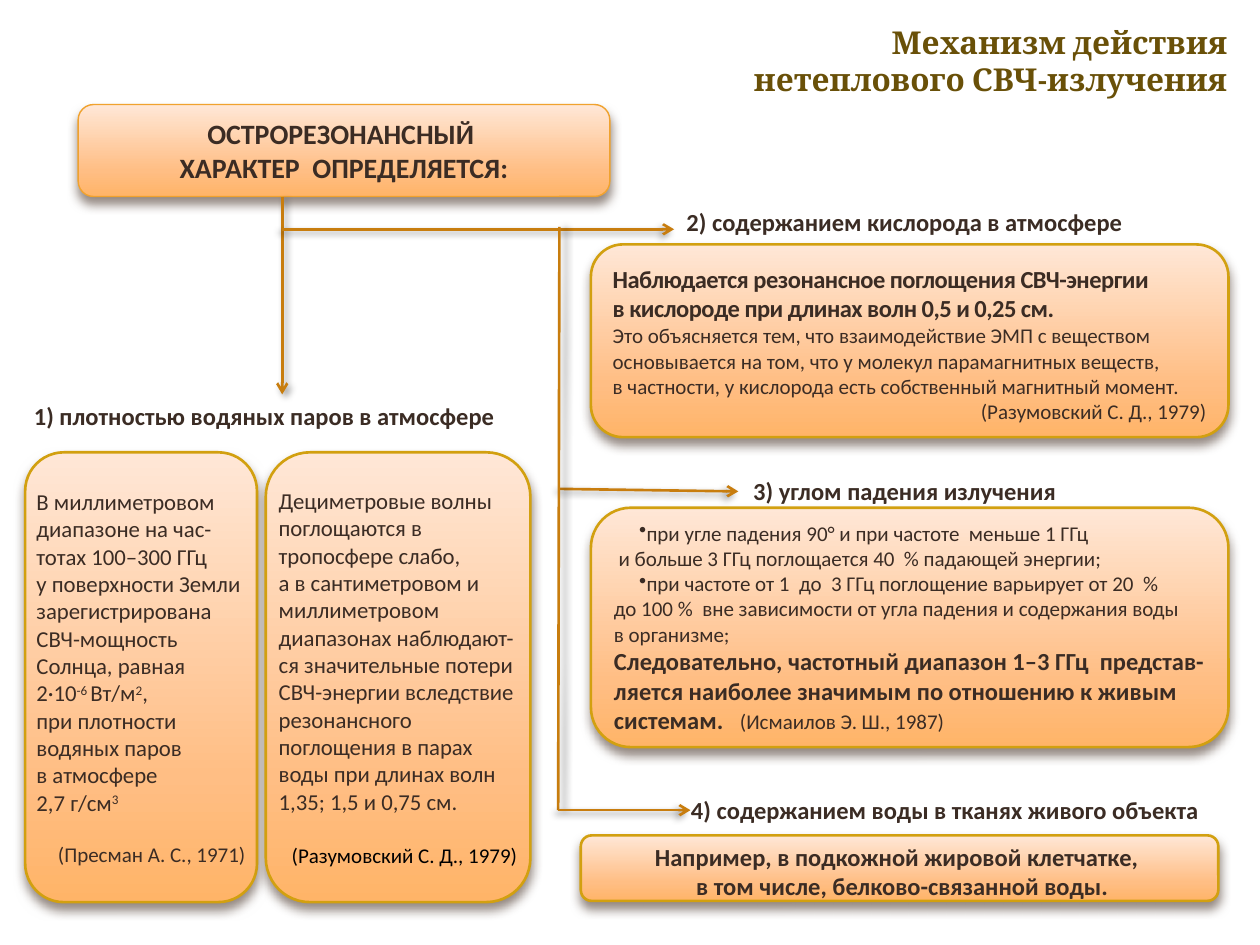
import copy
from dataclasses import dataclass

import pptx
import pptx.dml.color
import pptx.enum.shapes
import pptx.enum.text
import pptx.oxml
import pptx.oxml.ns
import pptx.util
from pptx.util import Inches

ALIGN = pptx.enum.text.PP_ALIGN
ANCHOR = pptx.enum.text.MSO_ANCHOR
NAMESPACE = pptx.oxml.ns.nsdecls("a")
ZERO_INSETS = (0, 0, 0, 0)
PANEL_INSETS = (0.1, 0.05, 0.1, 0)


@dataclass(frozen=True)
class Theme:
    heading_font: str = "Cambria"
    body_font: str = "Calibri"
    heading: str = "695008"
    ink: str = "3B2C24"
    black: str = "000000"
    header_border: str = "F0A22E"
    panel_border: str = "D2A010"
    arrow: str = "C87D0E"
    gradient: tuple = ((0, "FFE7D7"), (0.72, "FFBE84"), (1, "FFB468"))
    panel_shadow: tuple = ("4E3B30", 60, 6, 4)
    arrow_shadow: tuple = ("000000", 40, 4, 3)
    title_size: int = 18
    header_size: int = 16
    strong_size: int = 14
    column_size: int = 13
    small_size: int = 12


THEME = Theme()


@dataclass(frozen=True)
class Box:
    left: float
    top: float
    width: float
    height: float

    def inside(self, x, y, width, height):
        return Box(self.left + x, self.top + y, width, height)

    def lengths(self):
        return [Inches(n) for n in (self.left, self.top, self.width, self.height)]


def color(value):
    return pptx.dml.color.RGBColor.from_string(value)


def add_shadow(shape, shadow, angle):
    """Put an outer shadow (colour, opacity %, blur pt, distance pt) on a shape."""
    tint, opacity, blur, distance = shadow
    properties = shape._element.spPr
    effects = properties.find(pptx.oxml.ns.qn("a:effectLst"))
    if effects is None:
        effects = pptx.oxml.parse_xml(f"<a:effectLst {NAMESPACE}/>")
        properties.append(effects)
    effects.append(pptx.oxml.parse_xml(
        f'<a:outerShdw {NAMESPACE} blurRad="{blur * 12700}" dist="{distance * 12700}" '
        f'dir="{angle * 60000}" rotWithShape="0"><a:srgbClr val="{tint}">'
        f'<a:alpha val="{opacity * 1000}"/></a:srgbClr></a:outerShdw>'))


def add_run(paragraph, text, size, bold=False, tint=THEME.ink, font=THEME.body_font,
            raised=False, spacing=0):
    """Add text in one style; a newline becomes a line break."""
    for index, line in enumerate(text.split("\n")):
        if index:
            paragraph.add_line_break()
        if not line:
            continue
        run = paragraph.add_run()
        run.text = line
        run.font.size = pptx.util.Pt(size)
        run.font.bold = bold
        run.font.name = font
        run.font.color.rgb = color(tint)
        if raised:
            run._r.get_or_add_rPr().set("baseline", "30000")
        if spacing:
            run._r.get_or_add_rPr().set("spc", str(spacing))


def next_paragraph(frame, align=ALIGN.LEFT, before=0):
    first = frame.paragraphs[0]
    paragraph = frame.add_paragraph() if first.runs else first
    paragraph.alignment = align
    paragraph.space_before = pptx.util.Pt(before)
    return paragraph


def set_indent(paragraph, first_line, tab, tab_align, bullet=None):
    properties = paragraph._p.get_or_add_pPr()
    properties.set("marL", str(Inches(0.09)))
    properties.set("indent", str(Inches(first_line)))
    if bullet:
        properties.append(pptx.oxml.parse_xml(f'<a:buChar {NAMESPACE} char="{bullet}"/>'))
    properties.append(pptx.oxml.parse_xml(
        f'<a:tabLst {NAMESPACE}><a:tab pos="{Inches(tab)}" algn="{tab_align}"/></a:tabLst>'))


def set_insets(frame, insets):
    frame.margin_left, frame.margin_top, frame.margin_right, frame.margin_bottom = map(Inches, insets)


def add_panel(slide, box, insets=ZERO_INSETS, border=THEME.panel_border, weight=1.5):
    """Draw a rounded gradient panel and return its text frame."""
    shape = slide.shapes.add_shape(
        pptx.enum.shapes.MSO_SHAPE.ROUNDED_RECTANGLE, *box.lengths())
    shape.fill.gradient()
    shape.fill.gradient_angle = 270
    stop_list = shape._element.spPr.find(".//" + pptx.oxml.ns.qn("a:gsLst"))
    stop_list.append(copy.deepcopy(stop_list[-1]))
    for stop, (position, tint) in zip(shape.fill.gradient_stops, THEME.gradient):
        stop.position = position
        stop.color.rgb = color(tint)
    shape.line.color.rgb = color(border)
    shape.line.width = pptx.util.Pt(weight)
    shape.shadow.inherit = False
    add_shadow(shape, THEME.panel_shadow, 90)
    frame = shape.text_frame
    frame.word_wrap = True
    frame.vertical_anchor = ANCHOR.MIDDLE
    set_insets(frame, insets)
    return frame


def add_label(slide, box, wrap=False):
    frame = slide.shapes.add_textbox(*box.lengths()).text_frame
    frame.word_wrap = wrap
    frame.auto_size = pptx.enum.text.MSO_AUTO_SIZE.SHAPE_TO_FIT_TEXT
    return frame


def add_caption(slide, box, text):
    frame = add_label(slide, box)
    add_run(next_paragraph(frame), text, THEME.strong_size, bold=True)
    return frame


def add_title(slide, box):
    paragraph = next_paragraph(add_label(slide, box, wrap=True), ALIGN.RIGHT)
    add_run(paragraph, "Механизм действия\nнетеплового СВЧ-излучения", THEME.title_size,
            bold=True, tint=THEME.heading, font=THEME.heading_font)


def add_header(slide, box):
    frame = add_panel(slide, box, (0.1, 0.05, 0.1, 0.05), THEME.header_border, 0.79)
    add_run(next_paragraph(frame, ALIGN.CENTER), "ОСТРОРЕЗОНАНСНЫЙ \nХАРАКТЕР  ОПРЕДЕЛЯЕТСЯ:",
            THEME.header_size, bold=True)


def add_arrows(slide, box):
    """Draw the branching lines; the box spans them from the header to the last arrow."""
    trunk, bottom = 2.2, box.height
    branches = (
        ((0, 0), (0, 1.57), 45, True),
        ((0, 0.26), (box.width - 0.51, 0.26), 135, True),
        ((trunk, 2.32), (box.width, 2.34), 135, True),
        ((trunk, 0.24), (trunk - 0.01, bottom), 0, False),
        ((trunk - 0.01, bottom), (3.24, bottom), 135, True),
    )
    for start, end, shadow_angle, has_head in branches:
        points = [Inches(origin + offset) for point in (start, end)
                  for origin, offset in zip((box.left, box.top), point)]
        connector = slide.shapes.add_connector(
            pptx.enum.shapes.MSO_CONNECTOR.STRAIGHT, *points)
        connector.line.color.rgb = color(THEME.arrow)
        connector.line.width = pptx.util.Pt(1.5)
        if has_head:
            connector.line._get_or_add_ln().append(
                pptx.oxml.parse_xml(f'<a:tailEnd {NAMESPACE} type="arrow"/>'))
        add_shadow(connector, THEME.arrow_shadow, shadow_angle)


def add_vapour(slide, box):
    add_caption(slide, box.inside(-0.03, 0, 3.88, 0.34), "1) плотностью водяных паров в атмосфере")
    size = THEME.column_size
    frame = add_panel(slide, box.inside(0, 0.46, 1.84, box.height - 0.46))
    paragraph = next_paragraph(frame)
    pieces = (
        "В миллиметровом диапазоне на час-тотах 100–300 ГГц \nу поверхности Земли "
        "зарегистрирована СВЧ-мощность \nСолнца, равная\n2·10", "-6 ", "Вт/м", "2",
        ", \nпри плотности водяных паров\nв атмосфере\n2,7 г/см", "3")
    for index, piece in enumerate(pieces):
        add_run(paragraph, piece, size, raised=index % 2 == 1)
    add_run(next_paragraph(frame, ALIGN.RIGHT, 14.6), "(Пресман А. С., 1971)", THEME.small_size)

    frame = add_panel(slide, box.inside(1.91, 0.46, 2.1, box.height - 0.46))
    add_run(next_paragraph(frame),
            "Дециметровые волны поглощаются в тропосфере слабо,\nа в сантиметровом и "
            "миллиметровом диапазонах наблюдают-ся значительные потери СВЧ-энергии "
            "вследствие резонансного поглощения в парах воды при длинах волн", size)
    add_run(next_paragraph(frame), "1,35; 1,5 и 0,75 см.", size)
    add_run(next_paragraph(frame, ALIGN.RIGHT, 15.9), "(Разумовский С. Д., 1979)",
            THEME.small_size, tint=THEME.black)


def add_oxygen(slide, box):
    add_caption(slide, box.inside(0.66, 0, 3.74, 0.34), "2) содержанием кислорода в атмосфере")
    frame = add_panel(slide, box.inside(0, 0.35, box.width, box.height - 0.35), PANEL_INSETS)
    paragraph = next_paragraph(frame)
    add_run(paragraph, "Наблюдается резонансное поглощения СВЧ-энергии\n"
            "в кислороде при длинах волн 0,5 и 0,25 см.\n",
            THEME.strong_size, bold=True, spacing=-30)
    add_run(paragraph, "Это объясняется тем, что взаимодействие ЭМП с веществом основывается на том, "
            "что у молекул парамагнитных веществ, \nв частности, у кислорода есть собственный "
            "магнитный момент.", THEME.small_size)
    add_run(next_paragraph(frame, ALIGN.RIGHT), "(Разумовский С. Д., 1979)", THEME.small_size)


def add_angle(slide, box):
    add_caption(slide, box.inside(1.19, 0, 2.67, 0.34), "3) углом падения излучения")
    frame = add_panel(slide, box.inside(0, 0.3, box.width, box.height - 0.3))
    for text in (
            "при угле падения 90° и при частоте  меньше 1 ГГц\n"
            " и больше 3 ГГц поглощается 40  % падающей энергии;",
            "при частоте от 1  до  3 ГГц поглощение варьирует от 20  % \nдо 100 %  вне "
            "зависимости от угла падения и содержания воды \nв организме;"):
        paragraph = next_paragraph(frame)
        set_indent(paragraph, 0.2, 0.49, "l", bullet="•")
        add_run(paragraph, text, THEME.small_size)
    paragraph = next_paragraph(frame)
    set_indent(paragraph, 0, 4.75, "r")
    add_run(paragraph, "Следовательно, частотный диапазон 1–3 ГГц  представ-ляется наиболее "
            "значимым по отношению к живым системам.\t", THEME.strong_size, bold=True)
    add_run(paragraph, "(Исмаилов Э. Ш., 1987)", THEME.small_size)


def add_tissue(slide, box):
    caption = add_caption(slide, box.inside(0.83, 0, 4.19, 0.24),
                          " 4) содержанием воды в тканях живого объекта")
    caption.word_wrap = True
    caption.vertical_anchor = ANCHOR.MIDDLE
    set_insets(caption, ZERO_INSETS)
    frame = add_panel(slide, box.inside(0, 0.32, box.width, box.height - 0.32), PANEL_INSETS)
    add_run(next_paragraph(frame, ALIGN.CENTER), "Например, в подкожной жировой клетчатке, \n"
            " в том числе, белково-связанной воды.", THEME.strong_size, bold=True)


def main():
    presentation = pptx.Presentation()
    presentation.slide_width, presentation.slide_height = Inches(10), Inches(7.5)
    slide = presentation.slides.add_slide(presentation.slide_layouts[6])
    add_title(slide, Box(4.84, 0.13, 5, 0.71))
    add_header(slide, Box(0.62, 0.83, 4.22, 0.73))
    add_arrows(slide, Box(2.24, 1.56, 3.62, 4.87))
    add_vapour(slide, Box(0.2, 3.13, 4.01, 4.03))
    add_oxygen(slide, Box(4.69, 1.59, 5.06, 1.88))
    add_angle(slide, Box(4.69, 3.73, 5.06, 2.2))
    add_tissue(slide, Box(4.61, 6.31, 5.06, 0.84))
    presentation.save("out.pptx")


if __name__ == "__main__":
    main()
